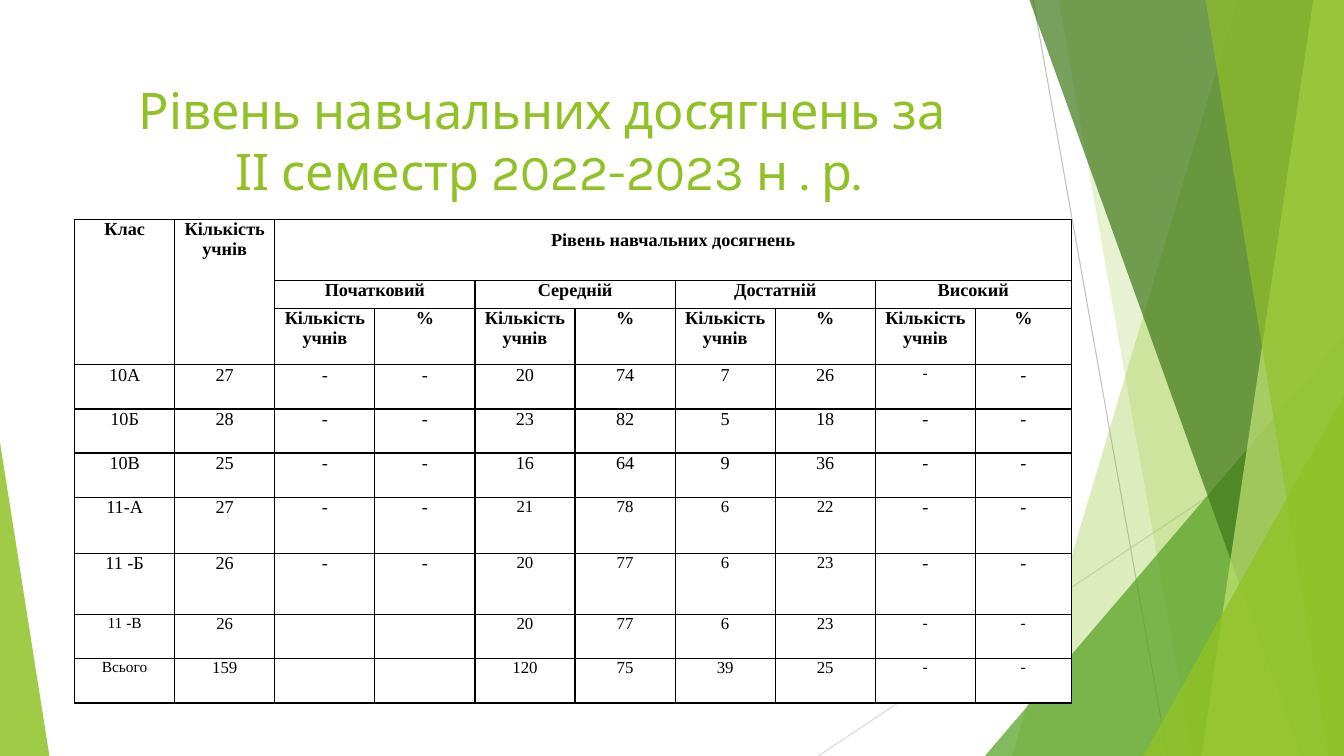
from lxml.etree import SubElement
from pptx import Presentation
from pptx.dml.color import RGBColor
from pptx.enum.shapes import MSO_CONNECTOR as Connector, MSO_SHAPE as Shape
from pptx.enum.text import MSO_ANCHOR as Anchor, PP_ALIGN as Align
from pptx.oxml.ns import qn
from pptx.util import Pt

colour = RGBColor.from_string
WIDTH, HEIGHT = 960, 540
GREEN = "90C226"


def write(frame, text, size, font="Times New Roman", color="000000", bold=False):
    frame.text = text
    for para in frame.paragraphs:
        para.alignment = Align.CENTER
        for span in para.runs:
            span.font.name = font
            span.font.size = Pt(size)
            span.font.bold = bold
            span.font.color.rgb = colour(color)


def paint(shape, color, opacity):
    """Fill a shape with a see-through colour, without outline or shadow."""
    shape.shadow.inherit = False
    shape.line.fill.background()
    shape.fill.solid()
    shape.fill.fore_color.rgb = colour(color)
    solid = shape.element.spPr.find(qn("a:solidFill"))
    SubElement(solid[0], qn("a:alpha"), val=str(opacity * 1000))


deck = Presentation()
deck.slide_width, deck.slide_height = Pt(WIDTH), Pt(HEIGHT)
page = deck.slides.add_slide(deck.slide_layouts[5])
shapes = page.shapes
title = shapes.title

# Thin lines behind the green facets
thin_lines = [
    (738, 0, 834, HEIGHT, "BFBFBF"),
    (WIDTH, 290, 584.5, HEIGHT, "D9D9D9"),
]
for x1, y1, x2, y2, color in thin_lines:
    line = shapes.add_connector(Connector.STRAIGHT, Pt(x1), Pt(y1), Pt(x2), Pt(y2))
    line.line.color.rgb = colour(color)
    line.line.width = Pt(0.75)
    SubElement(line.element.spPr, qn("a:effectLst"))

# Facets run to the right edge: (top left x, bottom left x) or triangle (left, top, width, apex)
facets = [
    ((884.2, 722.9), GREEN, 30),
    ((756, 851.8), GREEN, 20),
    ((703.5, 240, 256.5, 1), "54A021", 72),
    ((735.1, 929.5), "3F7819", 70),
    ((938.2, 858.2), "C0E474", 70),
    ((861.1, 949), GREEN, 65),
    ((816.7, 282.8, 143.3, 1), GREEN, 80),
    ((0, 316, 35.3, 0), GREEN, 85),
]
for place, color, opacity in facets:
    if len(place) == 2:
        top_x, bottom_x = place
        outline = shapes.build_freeform(Pt(top_x), Pt(-0.7), scale=1.0)
        corners = [(WIDTH, -0.7), (WIDTH, HEIGHT), (bottom_x, HEIGHT)]
        outline.add_line_segments([(Pt(x), Pt(y)) for x, y in corners], close=True)
        facet = outline.convert_to_shape()
    else:
        left, top, width, apex = place
        facet = shapes.add_shape(Shape.ISOSCELES_TRIANGLE, Pt(left), Pt(top),
                                 Pt(width), Pt(HEIGHT - top))
        facet.adjustments[0] = apex
    paint(facet, color, opacity)

# Title, brought in front of the facets
title.element.getparent().append(title.element)
title.left, title.top, title.width, title.height = Pt(53.3), Pt(48), Pt(677), Pt(104)
title.text_frame.word_wrap = True
title.text_frame.vertical_anchor = Anchor.MIDDLE
write(title.text_frame, "Рівень навчальних досягнень за \vІІ семестр 2022-2023 н . р.",
      36, font="Karla", color=GREEN)

# Table of results
column_widths = [71.5] * 9 + [68.5]
row_heights = [43.5, 20, 40.5, 31.5, 31.5, 31.5, 40, 44, 31.5, 31.5]
table = shapes.add_table(len(row_heights), len(column_widths), Pt(53.3), Pt(156.7),
                         Pt(sum(column_widths)), Pt(sum(row_heights))).table
table.first_row = table.horz_banding = False
for column, width in zip(table.columns, column_widths):
    column.width = Pt(width)
for row, height in zip(table.rows, row_heights):
    row.height = Pt(height)

for cell in table.iter_cells():
    cell.margin_left = cell.margin_right = Pt(5)
    cell.margin_top = cell.margin_bottom = 0
    properties = cell._tc.get_or_add_tcPr()
    for side in ("a:lnL", "a:lnR", "a:lnT", "a:lnB"):
        border = SubElement(properties, qn(side), w=str(Pt(1)))
        SubElement(SubElement(border, qn("a:solidFill")), qn("a:srgbClr"), val="000000")
    cell.fill.solid()
    cell.fill.fore_color.rgb = colour("FFFFFF")

# Headings: row, column, rows spanned, columns spanned, text
headings = [
    (0, 0, 3, 1, "Клас"),
    (0, 1, 3, 1, "Кількість учнів"),
    (0, 2, 1, 8, "Рівень навчальних досягнень"),
]
for index, level in enumerate(["Початковий", "Середній", "Достатній", "Високий"]):
    first = 2 + 2 * index
    headings += [(1, first, 1, 2, level), (2, first, 1, 1, "Кількість учнів"),
                 (2, first + 1, 1, 1, "%")]
for row, column, tall, wide, text in headings:
    cell = table.cell(row, column)
    if tall * wide > 1:
        cell.merge(table.cell(row + tall - 1, column + wide - 1))
    write(cell.text_frame, text, 13, bold=True)
table.cell(0, 2).margin_top = Pt(8)

# Values of a class, then text sizes of its ten cells
plain = [13] * 10
mixed = [13] * 4 + [12] * 4 + [13] * 2
small = [11] + [12] * 7 + [11] * 2
results = [
    (["10А", "27", "-", "-", "20", "74", "7", "26", "-", "-"], [13] * 8 + [11, 13]),
    (["10Б", "28", "-", "-", "23", "82", "5", "18", "-", "-"], plain),
    (["10В", "25", "-", "-", "16", "64", "9", "36", "-", "-"], plain),
    (["11-А", "27", "-", "-", "21", "78", "6", "22", "-", "-"], mixed),
    (["11 -Б", "26", "-", "-", "20", "77", "6", "23", "-", "-"], mixed),
    (["11 -В", "26", "", "", "20", "77", "6", "23", "-", "-"], small),
    (["Всього", "159", "", "", "120", "75", "39", "25", "-", "-"], small),
]
for row, (values, sizes) in enumerate(results, start=3):
    for column, (value, size) in enumerate(zip(values, sizes)):
        write(table.cell(row, column).text_frame, value, size)

deck.save("out.pptx")
